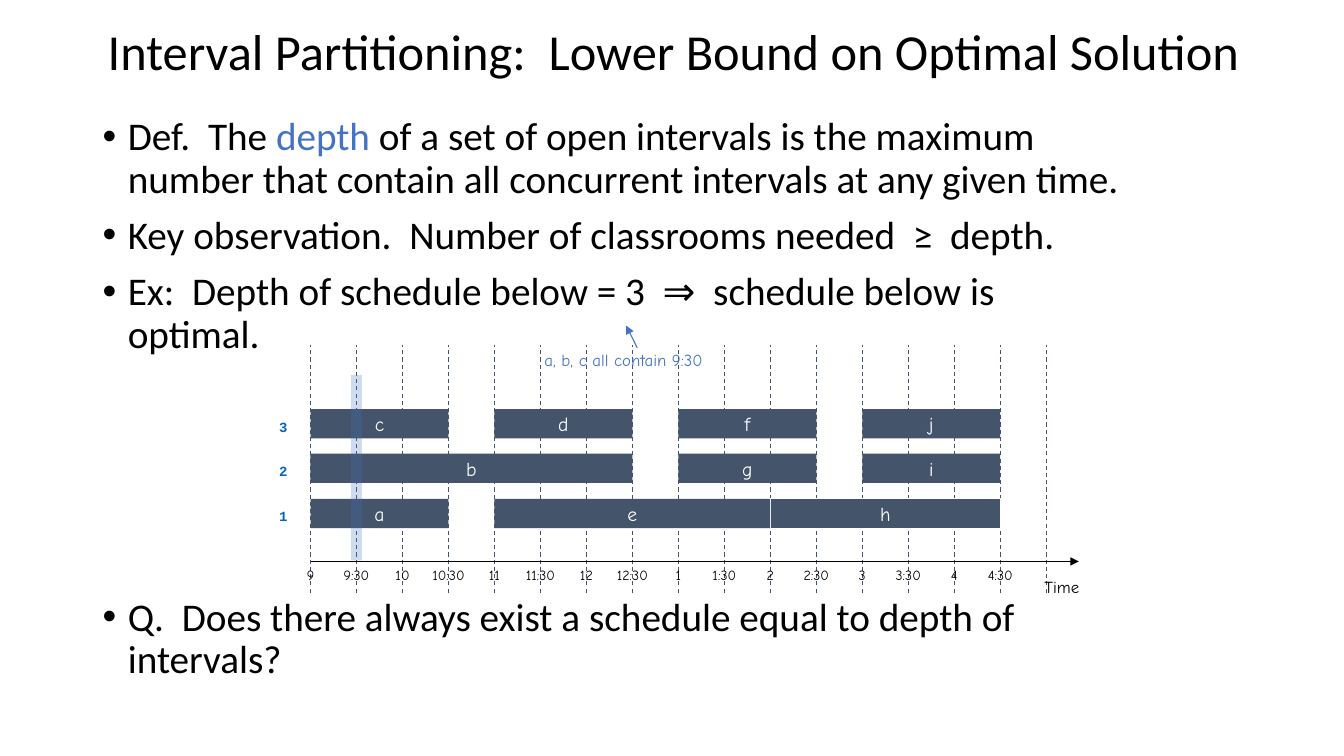
from lxml import etree
from pptx import Presentation
from pptx.dml.color import RGBColor
from pptx.enum.dml import MSO_LINE
from pptx.enum.shapes import MSO_CONNECTOR, MSO_SHAPE
from pptx.enum.text import MSO_ANCHOR, PP_ALIGN
from pptx.oxml.ns import qn
from pptx.util import Inches, Pt

BLACK = RGBColor(0x00, 0x00, 0x00)
WHITE = RGBColor(0xFF, 0xFF, 0xFF)
SLATE = RGBColor(0x44, 0x54, 0x6A)
BLUE = RGBColor(0x44, 0x72, 0xC4)
ROOM_BLUE = RGBColor(0x05, 0x63, 0xC1)

# Time axis: 9:00 at AXIS_X, one STEP per half hour
AXIS_X, AXIS_Y, STEP = 3.08, 5.57, 0.456
ROWS = {1: 4.95, 2: 4.5, 3: 4.06}
TIMES = ["9", "9:30", "10", "10:30", "11", "11:30", "12", "12:30",
         "1", "1:30", "2", "2:30", "3", "3:30", "4", "4:30"]
# name, classroom, first half hour, number of half hours
LECTURES = [("h", 1, 10, 5), ("c", 3, 0, 3), ("a", 1, 0, 3), ("e", 1, 4, 6),
            ("f", 3, 8, 3), ("g", 2, 8, 3), ("i", 2, 12, 3), ("j", 3, 12, 3),
            ("d", 3, 4, 3), ("b", 2, 0, 7)]
BULLETS = [
    (10, [("Def.  The ", BLACK), ("depth", BLUE),
          (" of a set of open intervals is the maximum number that contain "
           "all concurrent intervals at any given time.", BLACK)]),
    (10, [("Key observation.  Number of classrooms needed  ≥  depth.", BLACK)]),
    (10, [("Ex:  Depth of schedule below = 3  ⇒  schedule below is optimal.", BLACK)]),
    # the wide gap leaves room for the schedule
    (172, [("Q.  Does there always exist a schedule equal to depth of intervals?", BLACK)]),
]


def tick_x(i):
    return AXIS_X + i * STEP


class SlideBuilder:
    TITLE = {"name": "Calibri", "size": Pt(36)}
    BODY = {"name": "Calibri", "size": Pt(28)}
    BAR = {"name": "Comic Neue", "size": Pt(14)}
    NOTE = {"name": "Comic Neue", "size": Pt(12)}
    TICK = {"name": "Comic Neue", "size": Pt(10)}
    ROOM = {"name": "Courier New", "size": Pt(10), "bold": True}

    def __init__(self, slide):
        self.s = slide

    def run(self, p, text, style, color):
        r = p.add_run()
        r.text = text
        for key, value in style.items():
            setattr(r.font, key, value)
        r.font.color.rgb = color

    def text(self, box, text, style, color=BLACK, align=PP_ALIGN.LEFT,
             wrap=True, inset=True, **frame):
        tf = self.s.shapes.add_textbox(*map(Inches, box)).text_frame
        tf.word_wrap = wrap
        if not inset:
            frame.update(dict.fromkeys(
                ("margin_left", "margin_top", "margin_right", "margin_bottom"), 0))
        for key, value in frame.items():
            setattr(tf, key, value)
        p = tf.paragraphs[0]
        p.alignment = align
        self.run(p, text, style, color)
        return p

    def bullets(self, box, items):
        tf = self.s.shapes.add_textbox(*map(Inches, box)).text_frame
        tf.word_wrap = True
        for i, (gap, runs) in enumerate(items):
            p = tf.add_paragraph() if i else tf.paragraphs[0]
            p.line_spacing = 0.9
            p.space_before = Pt(gap)
            pPr = p._p.get_or_add_pPr()
            pPr.set("marL", str(Inches(0.25)))
            pPr.set("indent", str(-Inches(0.25)))
            etree.SubElement(pPr, qn("a:buFont")).set("typeface", "Arial")
            etree.SubElement(pPr, qn("a:buChar")).set("char", "•")
            for text, color in runs:
                self.run(p, text, self.BODY, color)

    def line(self, start, end, color, width, dash=None, arrow=False):
        sp = self.s.shapes.add_connector(
            MSO_CONNECTOR.STRAIGHT, *map(Inches, start + end))
        sp.line.color.rgb = color
        sp.line.width = Pt(width)
        if dash:
            sp.line.dash_style = dash
        if arrow:
            ln = sp.line._get_or_add_ln()
            etree.SubElement(ln, qn("a:tailEnd")).set("type", "triangle")
        etree.SubElement(sp._element.spPr, qn("a:effectLst"))

    def rect(self, box, fill, label="", outline=None, alpha=None):
        sp = self.s.shapes.add_shape(MSO_SHAPE.RECTANGLE, *map(Inches, box))
        sp.shadow.inherit = False
        sp.fill.solid()
        sp.fill.fore_color.rgb = fill
        if alpha:
            clr = sp._element.spPr.find(".//" + qn("a:srgbClr"))
            etree.SubElement(clr, qn("a:alpha")).set("val", str(alpha * 1000))
        if outline:
            sp.line.color.rgb = outline
            sp.line.width = Pt(0.75)
        else:
            sp.line.fill.background()
        if label:
            tf = sp.text_frame
            tf.word_wrap = False
            tf.vertical_anchor = MSO_ANCHOR.MIDDLE
            p = tf.paragraphs[0]
            p.alignment = PP_ALIGN.CENTER
            self.run(p, label, self.BAR, WHITE)


def main():
    prs = Presentation()
    prs.slide_width, prs.slide_height = Inches(13.33), Inches(7.5)
    b = SlideBuilder(prs.slides.add_slide(prs.slide_layouts[6]))

    # Half-hour grid
    for i in range(len(TIMES) + 1):
        b.line((tick_x(i), 5.88), (tick_x(i), 3.42), SLATE, 0.75, MSO_LINE.DASH)

    # Title and bullets
    p = b.text((0.97, 0.27, 12.36, 0.54), "Interval Partitioning:  Lower Bound on Optimal Solution",
               b.TITLE, vertical_anchor=MSO_ANCHOR.MIDDLE)
    p.line_spacing = 0.9
    b.bullets((0.92, 1.11, 10.36, 5.92), BULLETS)

    # Time axis
    b.line((AXIS_X, AXIS_Y), (10.7, AXIS_Y), BLACK, 1.25, arrow=True)
    b.text((10.26, 5.67, 0.72, 0.3), "Time", b.NOTE)
    for i, time in enumerate(TIMES):
        b.text((tick_x(i) - 0.3, AXIS_Y, 0.6, 0.27), time, b.TICK,
               align=PP_ALIGN.CENTER, wrap=False)

    # Lectures and classroom numbers
    for name, room, first, count in LECTURES:
        b.rect((tick_x(first), ROWS[room], count * STEP, 0.29), SLATE, name,
               outline=WHITE if name == "h" else None)
    for room, y in ROWS.items():
        b.text((2.67, y + 0.04, 0.29, 0.27), str(room), b.ROOM, ROOM_BLUE)

    # Depth at 9:30
    b.text((5.4, 3.47, 1.98, 0.2), "a, b, c all contain 9:30", b.NOTE, BLUE, inset=False)
    b.line((6.32, 3.45), (6.21, 3.23), BLUE, 0.75, arrow=True)
    b.rect((3.48, 3.72, 0.11, 1.84), BLUE, alpha=25)

    prs.save("out.pptx")


if __name__ == "__main__":
    main()
